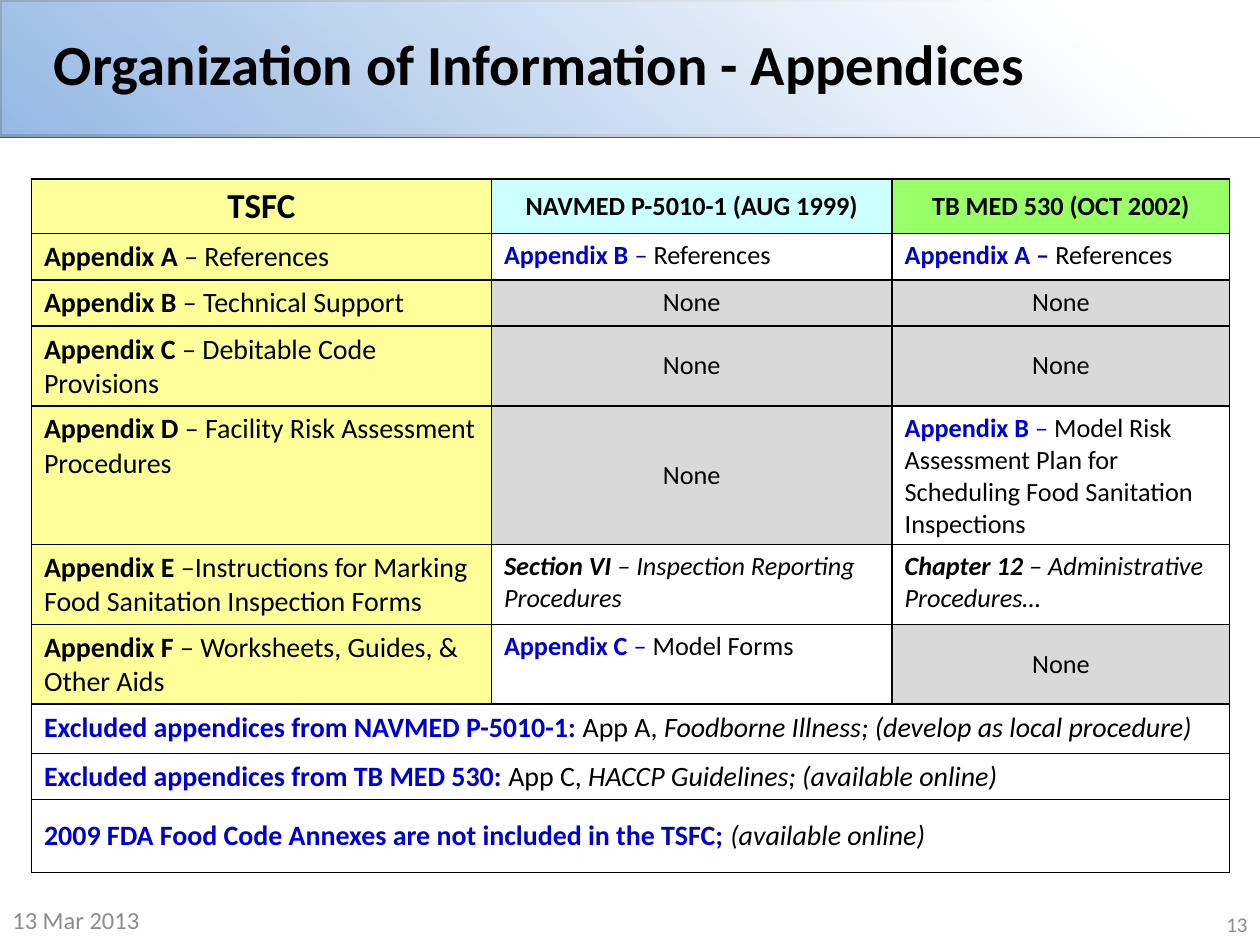
from lxml import etree
from pptx import Presentation
from pptx.dml.color import RGBColor
from pptx.enum.shapes import MSO_SHAPE as Shape
from pptx.enum.text import MSO_ANCHOR as Anchor, PP_ALIGN as Align
from pptx.oxml import parse_xml
from pptx.oxml.ns import nsdecls, qn
from pptx.util import Inches, Pt

BLACK, BLUE, GREY = "000000", "0000CC", "8C8C8C"
YELLOW, WHITE, SILVER = "FFFF99", "FFFFFF", "D9D9D9"
STYLES = {
    "plain": {},
    "bold": {"bold": True},
    "italic": {"italic": True},
    "bold italic": {"bold": True, "italic": True},
    "blue": {"color": BLUE},
    "bold blue": {"bold": True, "color": BLUE},
}

HEADERS = [
    ("TSFC", 20, YELLOW),
    ("NAVMED P-5010-1 (AUG 1999)", 15, "CCFFFF"),
    ("TB MED 530 (OCT 2002)", 15, "99FF66"),
]
NONE = [("None", "plain")]
APPENDICES = [
    ([("Appendix A", "bold"), (" – References", "plain")],
     [("Appendix B ", "bold blue"), ("–", "blue"), (" References", "plain")],
     [("Appendix A – ", "bold blue"), ("References", "plain")]),
    ([("Appendix B ", "bold"), ("– Technical Support", "plain")], NONE, NONE),
    ([("Appendix C ", "bold"), ("– Debitable Code Provisions", "plain")], NONE, NONE),
    ([("Appendix D", "bold"), (" – Facility Risk Assessment Procedures", "plain")],
     NONE,
     [("Appendix B ", "bold blue"), ("– ", "blue"),
      ("Model Risk Assessment Plan for Scheduling Food Sanitation Inspections", "plain")]),
    ([("Appendix E", "bold"),
      (" –Instructions for Marking Food Sanitation Inspection Forms", "plain")],
     [("Section VI ", "bold italic"), ("– Inspection Reporting Procedures", "italic")],
     [("Chapter 12 ", "bold italic"), ("– Administrative Procedures…", "italic")]),
    ([("Appendix F ", "bold"), ("– Worksheets, Guides, & Other Aids", "plain")],
     [("Appendix C ", "bold blue"), ("–", "blue"), (" Model Forms", "plain")],
     NONE),
]
EXCLUSIONS = [
    ([("Excluded appendices from NAVMED P-5010-1: ", "bold blue"), ("App A, ", "plain"),
      ("Foodborne Illness; (develop as local procedure)", "italic")], Anchor.TOP),
    ([("Excluded appendices from TB MED 530: ", "bold blue"), ("App C, ", "plain"),
      ("HACCP Guidelines; (available online)", "italic")], Anchor.TOP),
    ([("2009 FDA Food Code Annexes are not included in the TSFC; ", "bold blue"),
      ("(available online)", "italic")], Anchor.MIDDLE),
]
COLUMN_WIDTHS = [3.65, 3.18, 2.68]
ROW_HEIGHTS = [0.42, 0.35, 0.35, 0.61, 1.06, 0.61, 0.61, 0.39, 0.35, 0.58]


def rgb(value):
    return RGBColor.from_string(value)


def write_text(frame, runs, size, color=BLACK, align=Align.LEFT):
    paragraph = frame.paragraphs[0]
    paragraph.alignment = align
    for text, style in runs:
        run = paragraph.add_run()
        run.text = text
        font = run.font
        look = STYLES[style]
        font.name, font.size = "Calibri", Pt(size)
        font.bold = look.get("bold", False)
        font.italic = look.get("italic", False)
        font.color.rgb = rgb(look.get("color", color))


def add_label(slide, box, runs, size, **text_format):
    shape = slide.shapes.add_textbox(*map(Inches, box))
    frame = shape.text_frame
    frame.word_wrap = True
    frame.vertical_anchor = Anchor.MIDDLE
    write_text(frame, runs, size, **text_format)


def add_banner(slide):
    box = [Inches(length) for length in (0, 0, 10, 1.08)]
    base = slide.shapes.add_shape(Shape.RECTANGLE, *box)
    base.shadow.inherit = False
    base.fill.solid()
    base.fill.fore_color.rgb = rgb("558ED5")
    base.line.color.rgb = rgb("3A5F8C")
    base.line.width = Pt(2)

    glow = slide.shapes.add_shape(Shape.RECTANGLE, *box)
    glow.shadow.inherit = False
    glow.line.fill.background()
    gradient = parse_xml(
        f'<a:gradFill {nsdecls("a")} rotWithShape="1"><a:gsLst>'
        '<a:gs pos="14000"><a:srgbClr val="FFFFFF"/></a:gs>'
        '<a:gs pos="100000"><a:srgbClr val="FFFFFF"><a:alpha val="37000"/></a:srgbClr></a:gs>'
        '</a:gsLst><a:lin ang="7800000" scaled="0"/></a:gradFill>')
    glow._element.spPr.find(qn("a:prstGeom")).addnext(gradient)


def set_borders(cell):
    properties = cell._tc.get_or_add_tcPr()
    for position, side in enumerate(("a:lnL", "a:lnR", "a:lnT", "a:lnB")):
        line = etree.Element(qn(side), w=str(Pt(1)))
        fill = etree.SubElement(line, qn("a:solidFill"))
        etree.SubElement(fill, qn("a:srgbClr"), val=BLACK)
        properties.insert(position, line)


def fill_cell(cell, runs, size, fill, anchor=Anchor.TOP, align=Align.LEFT):
    cell.fill.solid()
    cell.fill.fore_color.rgb = rgb(fill)
    cell.vertical_anchor = anchor
    write_text(cell.text_frame, runs, size, align=align)


def add_comparison(slide):
    table = slide.shapes.add_table(
        len(ROW_HEIGHTS), len(COLUMN_WIDTHS), Inches(0.25), Inches(1.42),
        Inches(sum(COLUMN_WIDTHS)), Inches(sum(ROW_HEIGHTS))).table
    for column, width in zip(table.columns, COLUMN_WIDTHS):
        column.width = Inches(width)
    for row, height in zip(table.rows, ROW_HEIGHTS):
        row.height = Inches(height)
    for cell in table.iter_cells():
        set_borders(cell)

    for column, (text, size, fill) in enumerate(HEADERS):
        fill_cell(table.cell(0, column), [(text, "bold")], size, fill,
                  Anchor.MIDDLE, Align.CENTER)
    for row, entries in enumerate(APPENDICES, 1):
        for column, runs in enumerate(entries):
            cell = table.cell(row, column)
            if runs is NONE:
                fill_cell(cell, runs, 15, SILVER, Anchor.MIDDLE, Align.CENTER)
            elif column == 0:
                fill_cell(cell, runs, 16, YELLOW)
            else:
                fill_cell(cell, runs, 15, WHITE)
    for row, (runs, anchor) in enumerate(EXCLUSIONS, 1 + len(APPENDICES)):
        cell = table.cell(row, 0)
        cell.merge(table.cell(row, len(COLUMN_WIDTHS) - 1))
        fill_cell(cell, runs, 16, WHITE, anchor)


def main():
    presentation = Presentation()
    presentation.slide_width, presentation.slide_height = Inches(10), Inches(7.5)
    slide = presentation.slides.add_slide(presentation.slide_layouts[6])
    add_banner(slide)
    add_label(slide, (0.33, 0, 7.92, 1),
              [("Organization of Information - Appendices", "bold")], 32.4)
    add_label(slide, (0, 7.1, 2.33, 0.4), [("13 Mar 2013", "plain")], 14, color=GREY)
    add_comparison(slide)
    add_label(slide, (7.67, 7.17, 2.33, 0.33), [("13", "plain")], 12,
              color=GREY, align=Align.RIGHT)
    presentation.save("out.pptx")


if __name__ == "__main__":
    main()
